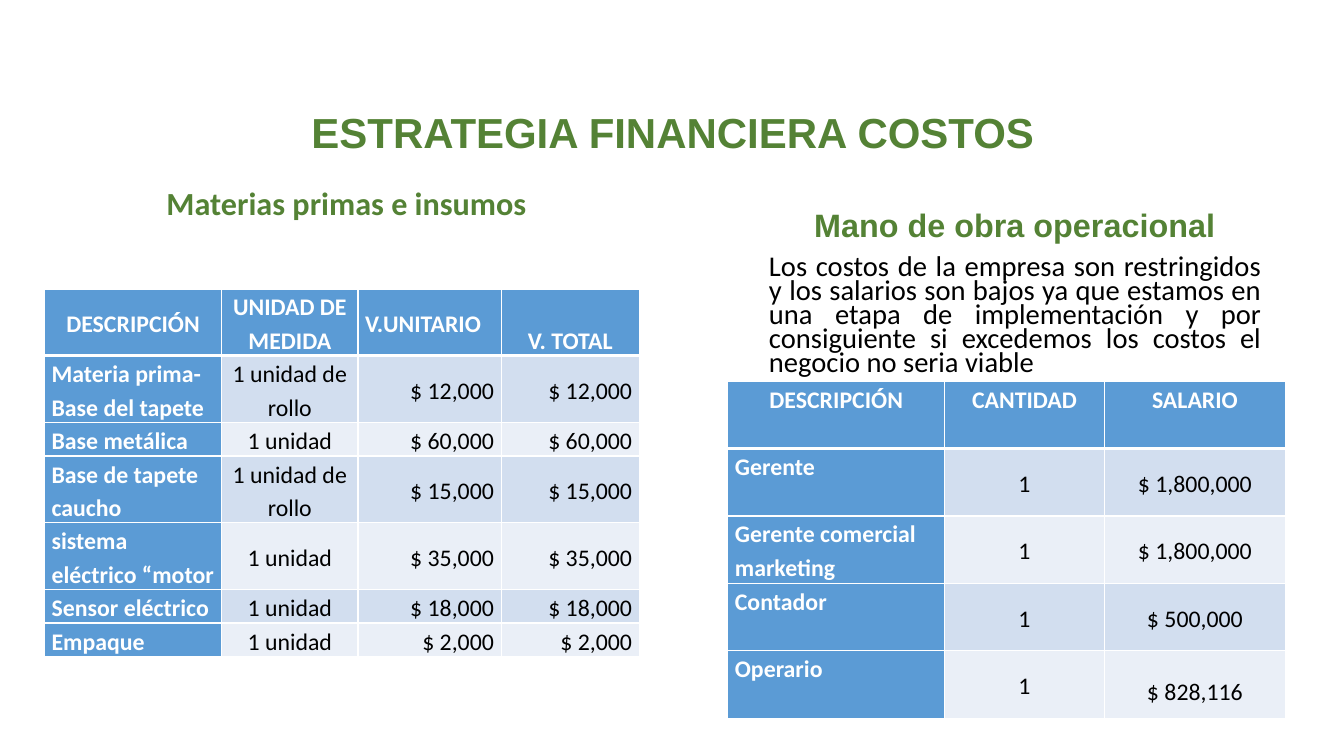
from lxml.etree import SubElement
from pptx import Presentation
from pptx.dml.color import RGBColor
from pptx.enum.text import MSO_ANCHOR, PP_ALIGN
from pptx.oxml.ns import qn
from pptx.util import Cm, Pt

LEFT, MID, RIGHT, JUST = PP_ALIGN.LEFT, PP_ALIGN.CENTER, PP_ALIGN.RIGHT, PP_ALIGN.JUSTIFY
TOP, HALF, LOW = MSO_ANCHOR.TOP, MSO_ANCHOR.MIDDLE, MSO_ANCHOR.BOTTOM
GREEN, BLUE, WHITE, BLACK = "548235", "5B9BD5", "FFFFFF", "000000"
BANDS = ["D2DEEF", "EAEFF7"]

TEXTS = [
    ((2.36, 2.31, 29.21, 2.18), HALF, 0.9, [
        ("ESTRATEGIA FINANCIERA COSTOS", MID, "Arial", 30, GREEN, True)]),
    ((1.22, 4.6, 15.04, 1.4), TOP, 0.9, [
        ("Materias primas e insumos", MID, "Calibri", 23, GREEN, True)]),
    ((19.13, 4.55, 12.9, 5.08), LOW, 0.7, [
        ("Mano de obra operacional", MID, "Arial", 23.1, GREEN, True),
        ("Los costos de la empresa son restringidos y los salarios son bajos ya que "
         "estamos en una etapa de implementación y por consiguiente si excedemos "
         "los costos el negocio no seria viable", JUST, "Calibri", 20.4, BLACK, False)]),
]

COSTS = {
    "at": (1.12, 7.28),
    "cols": [4.47, 3.43, 3.61, 3.48],
    "rows": [1.68, 1.68, 0.85, 1.68, 1.68, 0.85, 0.85],
    "align": [LEFT, MID, RIGHT, RIGHT],
    "label": HALF,
    "heads": [(MID, HALF), (MID, HALF), (LEFT, HALF), (MID, LOW)],
    "data": [
        ("DESCRIPCIÓN", "UNIDAD DE MEDIDA", "V.UNITARIO", "V. TOTAL"),
        ("Materia prima-Base del tapete", "1 unidad de rollo", "$ 12,000", "$ 12,000"),
        ("Base metálica", "1 unidad", "$ 60,000", "$ 60,000"),
        ("Base de tapete caucho", "1 unidad de rollo", "$ 15,000", "$ 15,000"),
        ("sistema eléctrico “motor", "1 unidad", "$ 35,000", "$ 35,000"),
        ("Sensor eléctrico", "1 unidad", "$ 18,000", "$ 18,000"),
        ("Empaque", "1 unidad", "$ 2,000", "$ 2,000"),
    ],
    "space": {},
}
WAGES = {
    "at": (18.34, 9.6),
    "cols": [5.47, 4.02, 4.57],
    "rows": [1.7] * 5,
    "align": [LEFT, MID, MID],
    "label": TOP,
    "heads": [(MID, TOP)] * 3,
    "data": [
        ("DESCRIPCIÓN", "CANTIDAD", "SALARIO"),
        ("Gerente", "1", "$ 1,800,000"),
        ("Gerente comercial marketing", "1", "$ 1,800,000"),
        ("Contador", "1", "$ 500,000"),
        ("Operario", "1", "$ 828,116"),
    ],
    "space": {(4, 2): 1.5},
}


def color(code):
    return RGBColor.from_string(code)


def write(para, text, align, face, size, code, bold, space):
    para.text = text
    para.alignment = align
    para.line_spacing = space
    font = para.runs[0].font
    for key, val in {"name": face, "size": Pt(size), "bold": bold}.items():
        setattr(font, key, val)
    font.color.rgb = color(code)


def edge(cell, head):
    props = cell._tc.get_or_add_tcPr()
    for spot, side in enumerate("LRTB"):
        width = 3 if head and side == "B" else 1
        line = SubElement(props, qn("a:ln" + side), w=str(Pt(width)))
        fill = SubElement(line, qn("a:solidFill"))
        SubElement(fill, qn("a:srgbClr"), val=WHITE)
        props.insert(spot, line)


def add_grid(slide, plan):
    data, cols, rows = plan["data"], plan["cols"], plan["rows"]
    spots = [Cm(n) for n in (*plan["at"], sum(cols), sum(rows))]
    grid = slide.shapes.add_table(len(rows), len(cols), *spots).table
    for col, width in zip(grid.columns, cols):
        col.width = Cm(width)
    for row, height in zip(grid.rows, rows):
        row.height = Cm(height)
    for r, line in enumerate(data):
        for c, text in enumerate(line):
            cell = grid.cell(r, c)
            align, anchor = plan["align"][c], HALF if c else plan["label"]
            if r == 0:
                align, anchor = plan["heads"][c]
            strong = r == 0 or c == 0
            look = {"margin_left": Cm(0.18), "margin_right": Cm(0.18), "margin_top": 0,
                    "margin_bottom": 0, "vertical_anchor": anchor}
            for key, val in look.items():
                setattr(cell, key, val)
            cell.fill.solid()
            cell.fill.fore_color.rgb = color(BLUE if strong else BANDS[(r - 1) % 2])
            edge(cell, r == 0)
            write(cell.text_frame.paragraphs[0], text, align, "Calibri", 17,
                  WHITE if strong else BLACK, strong, plan["space"].get((r, c), 1.15))


def add_text(slide, spot, anchor, space, lines):
    frame = slide.shapes.add_textbox(*[Cm(n) for n in spot]).text_frame
    frame.word_wrap = True
    frame.vertical_anchor = anchor
    for i, line in enumerate(lines):
        para = frame.add_paragraph() if i else frame.paragraphs[0]
        write(para, *line, space)
        if i:
            para.space_before = Pt(10)


def main():
    deck = Presentation()
    deck.slide_width, deck.slide_height = Cm(33.87), Cm(19.05)
    slide = deck.slides.add_slide(deck.slide_layouts[6])
    for item in TEXTS:
        add_text(slide, *item)
    for plan in (WAGES, COSTS):
        add_grid(slide, plan)
    deck.save("out.pptx")


if __name__ == "__main__":
    main()
